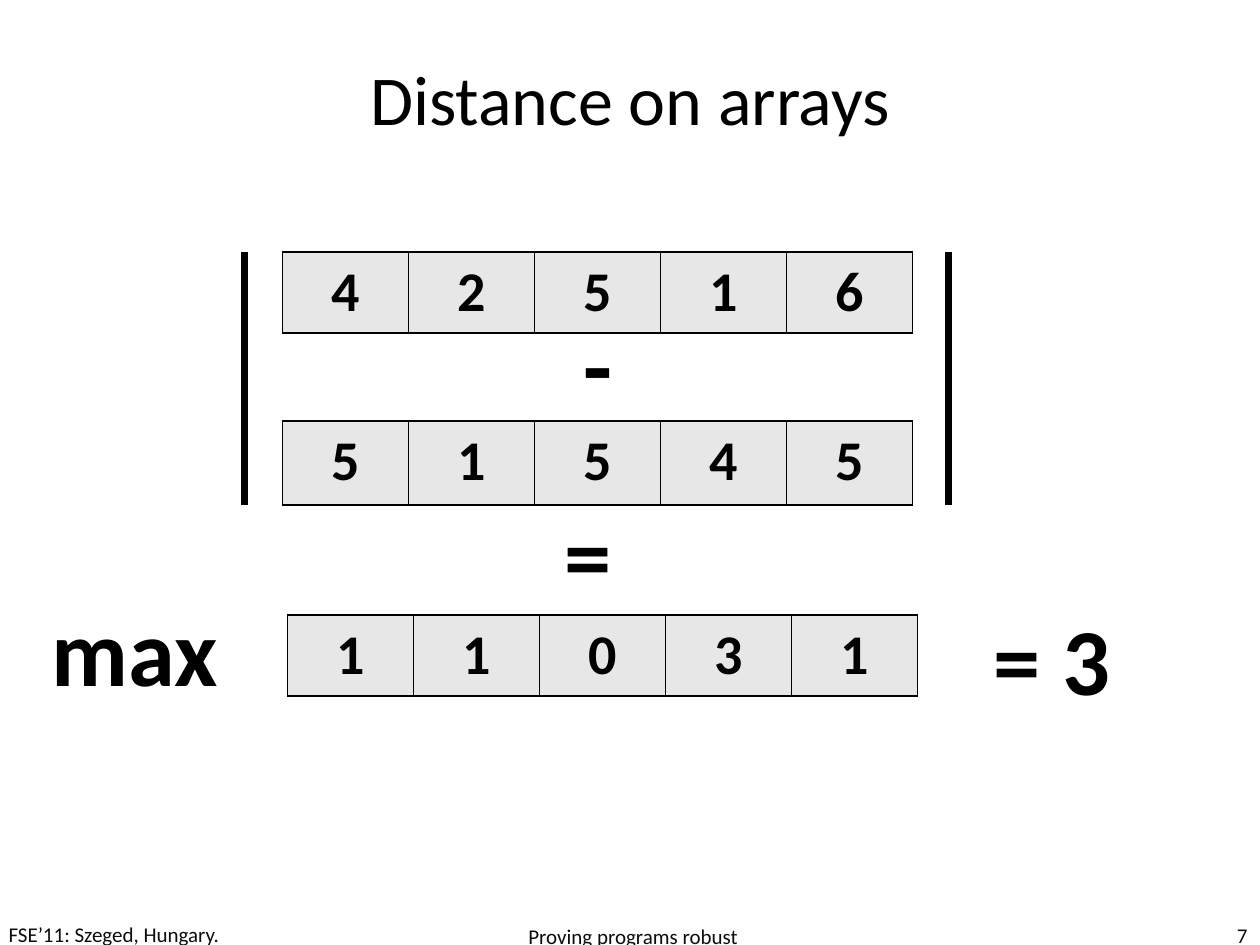
from dataclasses import dataclass

from lxml.etree import SubElement
from pptx import Presentation
from pptx.dml.color import RGBColor
from pptx.enum.shapes import MSO_CONNECTOR
from pptx.enum.text import MSO_ANCHOR, MSO_AUTO_SIZE, PP_ALIGN
from pptx.oxml.ns import qn
from pptx.slide import Slide
from pptx.util import Inches, Pt

BLACK = RGBColor(0x00, 0x00, 0x00)
FOOTER_INK = RGBColor(0x0D, 0x0D, 0x0D)
CELL_GREY = RGBColor(0xE7, 0xE7, 0xE7)
FONT = "Calibri"
CELL_WIDTH = 1
BAR_TOP, BAR_BOTTOM = 2, 4.01


@dataclass
class Label:
    text: str
    left: float
    top: float
    width: float
    height: float
    format: dict
    color: RGBColor = BLACK
    align: PP_ALIGN = PP_ALIGN.LEFT
    anchor: MSO_ANCHOR = MSO_ANCHOR.MIDDLE
    wrap: bool = True


@dataclass
class ArrayRow:
    values: str
    left: float
    top: float
    height: float


TITLE = {"name": FONT, "size": Pt(40)}
FOOTER = {"name": FONT, "size": Pt(12)}
OPERATOR = {"name": FONT, "size": Pt(54), "bold": True}
CELL = {"name": FONT, "size": Pt(32), "bold": True}


def operator(text: str, left: float, top: float, width: float) -> Label:
    return Label(text, left, top, width, 1.01, OPERATOR,
                 anchor=MSO_ANCHOR.TOP, wrap=False)


LABELS = [
    Label("Distance on arrays", 0.5, 0.3, 9, 0.95, TITLE, align=PP_ALIGN.CENTER),
    Label("Proving programs robust", 3.44, 7.33, 3.17, 0.2, FOOTER, FOOTER_INK,
          PP_ALIGN.CENTER),
    Label("FSE’11: Szeged, Hungary.", -0.03, 7.33, 2.33, 0.17, FOOTER, FOOTER_INK),
    Label("7", 7.67, 7.33, 2.33, 0.18, FOOTER, FOOTER_INK, PP_ALIGN.RIGHT),
    operator("-", 4.53, 2.38, 0.43),
    operator("=", 4.38, 3.89, 0.58),
    operator("= 3", 7.79, 4.72, 1.13),
    operator("max", 0.31, 4.65, 1.53),
]
ARRAYS = [
    ArrayRow("42516", 2.24, 2, 0.63),
    ArrayRow("51545", 2.24, 3.34, 0.67),
    ArrayRow("11031", 2.28, 4.88, 0.63),
]


def write(frame, text: str, format_values: dict, color: RGBColor, align: PP_ALIGN) -> None:
    paragraph = frame.paragraphs[0]
    paragraph.alignment = align
    run = paragraph.add_run()
    run.text = text
    for name, value in format_values.items():
        setattr(run.font, name, value)
    run.font.color.rgb = color


def draw_label(slide: Slide, label: Label) -> None:
    shape = slide.shapes.add_textbox(Inches(label.left), Inches(label.top),
                                     Inches(label.width), Inches(label.height))
    frame = shape.text_frame
    frame.word_wrap = label.wrap
    frame.auto_size = MSO_AUTO_SIZE.NONE if label.wrap else MSO_AUTO_SIZE.SHAPE_TO_FIT_TEXT
    frame.vertical_anchor = label.anchor
    write(frame, label.text, label.format, label.color, label.align)


def add_borders(cell) -> None:
    properties = cell._tc.get_or_add_tcPr()
    for side in ("a:lnL", "a:lnR", "a:lnT", "a:lnB"):
        line = SubElement(properties, qn(side), w=str(Pt(1)))
        fill = SubElement(line, qn("a:solidFill"))
        SubElement(fill, qn("a:srgbClr"), val=str(BLACK))


def draw_array(slide: Slide, array: ArrayRow) -> None:
    count = len(array.values)
    table = slide.shapes.add_table(1, count, Inches(array.left), Inches(array.top),
                                   Inches(count * CELL_WIDTH), Inches(array.height)).table
    table.first_row = table.horz_banding = False
    for cell, value in zip(table.iter_cells(), array.values):
        add_borders(cell)
        cell.fill.solid()
        cell.fill.fore_color.rgb = CELL_GREY
        write(cell.text_frame, value, CELL, BLACK, PP_ALIGN.CENTER)


def draw_bar(slide: Slide, x: float) -> None:
    bar = slide.shapes.add_connector(MSO_CONNECTOR.STRAIGHT, Inches(x), Inches(BAR_TOP),
                                     Inches(x), Inches(BAR_BOTTOM))
    bar.line.color.rgb = BLACK
    bar.line.width = Pt(3.75)
    SubElement(bar._element.spPr, qn("a:effectLst"))


def main() -> None:
    presentation = Presentation()
    presentation.slide_width, presentation.slide_height = Inches(10), Inches(7.5)
    slide = presentation.slides.add_slide(presentation.slide_layouts[6])

    # Arrays: two operands and their difference
    for array in ARRAYS:
        draw_array(slide, array)

    # Absolute value bars
    for x in (1.94, 7.53):
        draw_bar(slide, x)

    # Title, footer and operators
    for label in LABELS:
        draw_label(slide, label)

    presentation.save("out.pptx")


if __name__ == "__main__":
    main()
